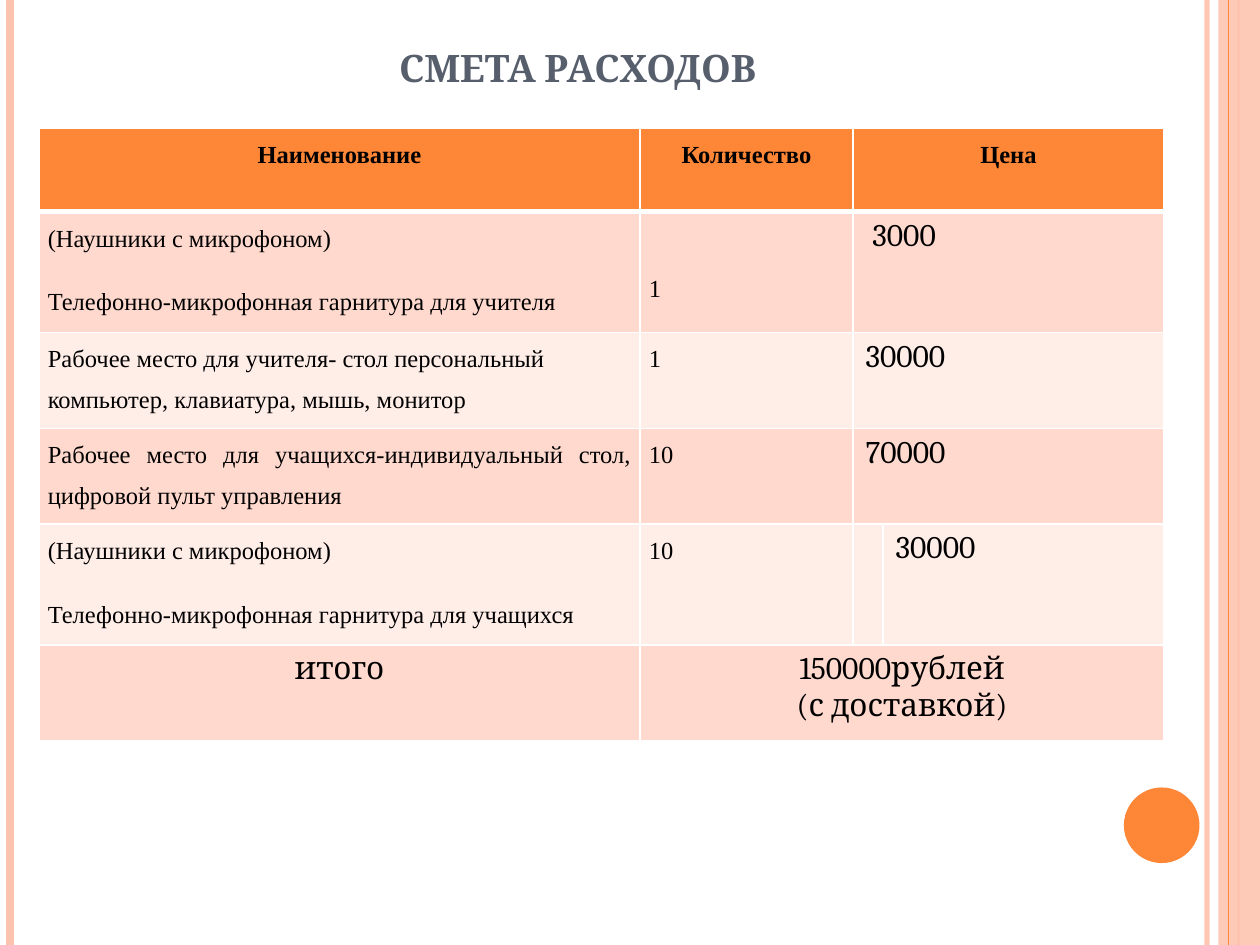
"""Builds the expense estimate slide."""
from lxml.etree import SubElement
from pptx import Presentation
from pptx.dml.color import RGBColor
from pptx.enum.shapes import MSO_CONNECTOR, MSO_SHAPE
from pptx.enum.text import MSO_ANCHOR, PP_ALIGN
from pptx.oxml.ns import qn
from pptx.util import Inches, Pt

HUES = {"main": "FE8637", "pale": "FEC3AE", "dark": "FFD9CE", "light": "FFEDE8",
        "title": "575F6D", "ink": "000000", "white": "FFFFFF"}
LEFT, MID, JUST = PP_ALIGN.LEFT, PP_ALIGN.CENTER, PP_ALIGN.JUSTIFY


def write(frame, text, size=18, face="Cambria", hue="ink", bold=False,
          align=(LEFT,), lead=None, after=None):
    for n, line in enumerate(text.split("\n")):
        para = frame.paragraphs[0] if n == 0 else frame.add_paragraph()
        para.alignment = align[min(n, len(align) - 1)]
        para.line_spacing = lead
        para.space_after = None if after is None else Pt(after)
        run = para.add_run()
        run.text = line
        run.font.size, run.font.name, run.font.bold = Pt(size), face, bold
        run.font.color.rgb = RGBColor.from_string(HUES[hue])


def fade(fill, share):
    tint = fill._xPr.find(qn("a:solidFill"))[0]
    SubElement(tint, qn("a:alpha")).set("val", str(share * 1000))


prs = Presentation()
prs.slide_width, prs.slide_height = Inches(10), Inches(7.5)
unit = prs.slide_width // 100
slide = prs.slides.add_slide(prs.slide_layouts[5])
shapes = slide.shapes

for kind, x, y, wide, high, hue, share in (
        (MSO_SHAPE.RECTANGLE, 96.7, 0, 3.3, 75, "pale", 87),
        (MSO_SHAPE.OVAL, 89.2, 62.5, 6, 6, "main", 100)):
    shape = shapes.add_shape(kind, *(int(v * unit) for v in (x, y, wide, high)))
    shape.shadow.inherit = False
    shape.fill.solid()
    shape.fill.fore_color.rgb = RGBColor.from_string(HUES[hue])
    fade(shape.fill, share)
    shape.line.fill.background()

for x, hue, width, share in ((95.8, "pale", 3, 93), (0.8, "pale", 4.5, 100),
                             (98.3, "pale", 1.5, 100), (97.5, "main", 0.75, 100)):
    x = int(x * unit)
    rule = shapes.add_connector(MSO_CONNECTOR.STRAIGHT, x, 0, x, prs.slide_height)
    rule.line.width = Pt(width)
    rule.line.color.rgb = RGBColor.from_string(HUES[hue])
    fade(rule.line.fill, share)
    SubElement(rule._element.spPr, qn("a:effectLst"))

title = shapes.title
title.left, title.top = 5 * unit, 3 * unit
title.width, title.height = int(81.7 * unit), int(4.8 * unit)
title.text_frame.vertical_anchor = MSO_ANCHOR.BOTTOM
write(title.text_frame, "смета расходов", size=27, hue="title", bold=True, align=(MID,))
title.text_frame.paragraphs[0].runs[0].font._element.set("cap", "small")

cols = (47.7, 16.9, 2.3, 22.3)
rows = (6.6, 9.6, 7.6, 7.6, 9.6, 7.6)
table = shapes.add_table(len(rows), len(cols), int(3.1 * unit), int(10.2 * unit),
                         int(sum(cols) * unit), int(sum(rows) * unit)).table
table.first_row = table.horz_banding = False
for col, wide in zip(table.columns, cols):
    col.width = int(wide * unit)
for row, high in zip(table.rows, rows):
    row.height = int(high * unit)

for r in range(len(rows)):
    for c in range(len(cols)):
        cell = table.cell(r, c)
        props = cell._tc.get_or_add_tcPr()
        for side in "LRTB":
            thick = (r, side) in ((0, "B"), (1, "T"))
            edge = SubElement(props, qn("a:ln" + side), w=str(Pt(3 if thick else 1)))
            SubElement(SubElement(edge, qn("a:solidFill")), qn("a:srgbClr"), val=HUES["white"])
        cell.fill.solid()
        hue = "main" if r == 0 else "dark" if r % 2 else "light"
        cell.fill.fore_color.rgb = RGBColor.from_string(HUES[hue])
for r in range(4):
    table.cell(r, 2).merge(table.cell(r, 3))
table.cell(5, 1).merge(table.cell(5, 3))

for r, c, text, align in (
        (0, 0, "Наименование", (MID,)),
        (0, 1, "Количество", (MID,)),
        (0, 2, "Цена", (MID,)),
        (1, 0, "(Наушники с микрофоном)\nТелефонно-микрофонная гарнитура для учителя", (LEFT,)),
        (1, 1, "1", (JUST,)),
        (2, 0, "Рабочее место для учителя- стол персональный компьютер, "
               "клавиатура, мышь, монитор", (LEFT,)),
        (2, 1, "1", (JUST,)),
        (3, 0, "Рабочее место для учащихся-индивидуальный стол, "
               "цифровой пульт управления", (JUST,)),
        (3, 1, "10", (JUST,)),
        (4, 0, "(Наушники с микрофоном)\nТелефонно-микрофонная гарнитура для учащихся",
         (LEFT, JUST)),
        (4, 1, "10", (JUST,))):
    cell = table.cell(r, c)
    cell.margin_left = cell.margin_right = int(0.7 * unit)
    cell.margin_top = 4 * unit if (r, c) == (1, 1) else 0
    cell.margin_bottom = 0
    write(cell.text_frame, text, size=14, face="Times New Roman", bold=r == 0,
          align=align, lead=1.5, after=13.2)

for r, c, text, align in ((1, 2, " 3000", LEFT), (2, 2, "30000", LEFT),
                          (3, 2, "70000", LEFT), (4, 3, "30000", LEFT),
                          (5, 0, "итого", MID),
                          (5, 1, "150000рублей\n(с доставкой)", MID)):
    write(table.cell(r, c).text_frame, text, align=(align,))

prs.save("out.pptx")
